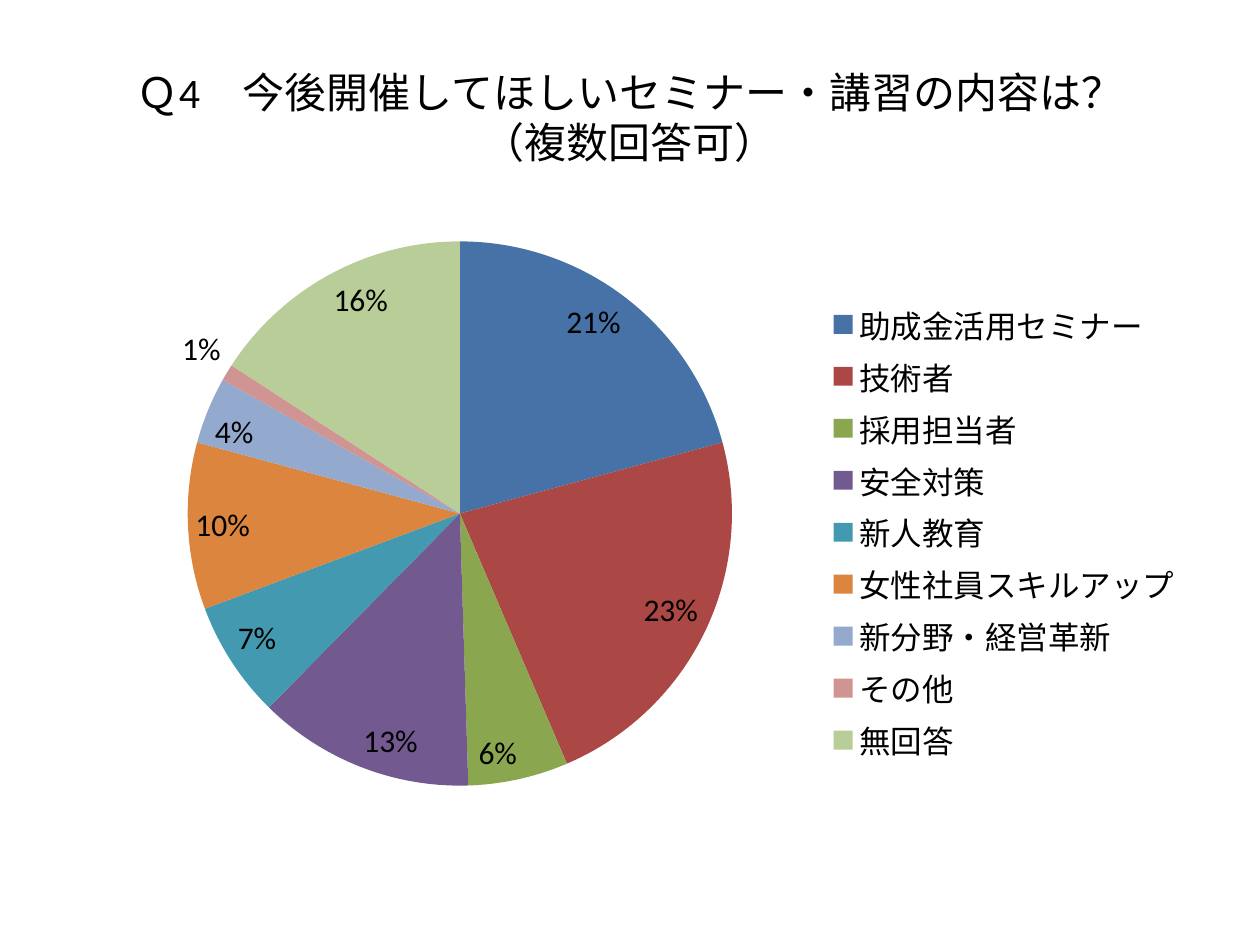
"""Build a survey slide with a pie chart of requested seminar topics."""
from lxml import etree
from pptx import Presentation
from pptx.chart.data import CategoryChartData
from pptx.dml.color import RGBColor
from pptx.enum.chart import XL_CHART_TYPE, XL_LABEL_POSITION, XL_LEGEND_POSITION
from pptx.enum.text import MSO_ANCHOR, PP_ALIGN
from pptx.oxml.ns import qn
from pptx.util import Inches, Pt

PIE = XL_CHART_TYPE.PIE
INSIDE, OUTSIDE = XL_LABEL_POSITION.INSIDE_END, XL_LABEL_POSITION.OUTSIDE_END
RIGHT = XL_LEGEND_POSITION.RIGHT
MIDDLE, CENTER = MSO_ANCHOR.MIDDLE, PP_ALIGN.CENTER
FONT = "Calibri"
COLORS = {
    "text": "000000",
    "助成金活用セミナー": "4672A8",
    "技術者": "AB4744",
    "採用担当者": "8AA64F",
    "安全対策": "725990",
    "新人教育": "4299B0",
    "女性社員スキルアップ": "DC853E",
    "新分野・経営革新": "93A9CE",
    "その他": "D09493",
    "無回答": "B8CD97",
}
TOPICS = [name for name in COLORS if name != "text"]
SHARES = [21, 23, 6, 13, 7, 10, 4, 1, 16]


def style_font(font, size):
    font.name = FONT
    font.size = Pt(size)
    font.color.rgb = RGBColor.from_string(COLORS["text"])


def place_part(part, position, target, **shares):
    for old in part.findall(qn("c:layout")):
        part.remove(old)
    layout = etree.Element(qn("c:layout"))
    manual = etree.SubElement(layout, qn("c:manualLayout"))
    settings = {"xMode": "edge", "yMode": "edge", **shares}
    if target:
        settings = {"layoutTarget": target, **settings}
    for name, value in settings.items():
        etree.SubElement(manual, qn(f"c:{name}")).set("val", str(value))
    part.insert(position, layout)


deck = Presentation()
deck.slide_width, deck.slide_height = Inches(10), Inches(7.5)
page = deck.slides.add_slide(deck.slide_layouts[6])
margin = deck.slide_width // 20
content_width = deck.slide_width - 2 * margin

title = page.shapes.add_textbox(margin, Inches(0.3), content_width, Inches(1.25))
frame = title.text_frame
frame.word_wrap = True
frame.vertical_anchor = MIDDLE
para = frame.paragraphs[0]
para.text = "Ｑ4　今後開催してほしいセミナー・講習の内容は？\n（複数回答可）"
para.alignment = CENTER
for span in para.runs:
    style_font(span.font, 24)

data = CategoryChartData()
data.categories = TOPICS
data.add_series("Series 1", SHARES)
chart = page.shapes.add_chart(
    PIE, margin, Inches(1.75), content_width, Inches(4.95), data
).chart
chart.has_title = False
style_font(chart.font, 18)
chart.has_legend = True
chart.legend.position = RIGHT
chart.legend.include_in_layout = False
style_font(chart.legend.font, 18)

plot = chart.plots[0]
plot.vary_by_categories = True
series = plot.series[0]
labels = series.data_labels
labels.show_percentage = True
labels.show_value = False
labels.number_format = "0%"
labels.number_format_is_linked = False
labels.position = INSIDE
style_font(labels.font, 18)
for index, topic in enumerate(TOPICS):
    fill = series.points[index].format.fill
    fill.solid()
    fill.fore_color.rgb = RGBColor.from_string(COLORS[topic])

other_label = series.points[TOPICS.index("その他")].data_label
other_label.text_frame.text = "1%"
style_font(other_label.text_frame.paragraphs[0].runs[0].font, 18)
other_label.position = OUTSIDE

plot_area = chart.element.find(f".//{qn('c:plotArea')}")
legend_part = chart.element.find(f".//{qn('c:legend')}")
place_part(plot_area, 0, "inner", x=0.11, y=0.03, w=0.48, h=0.88)
place_part(legend_part, 1, None, x=0.67, y=0.12, w=0.32, h=0.76)

deck.save("out.pptx")
